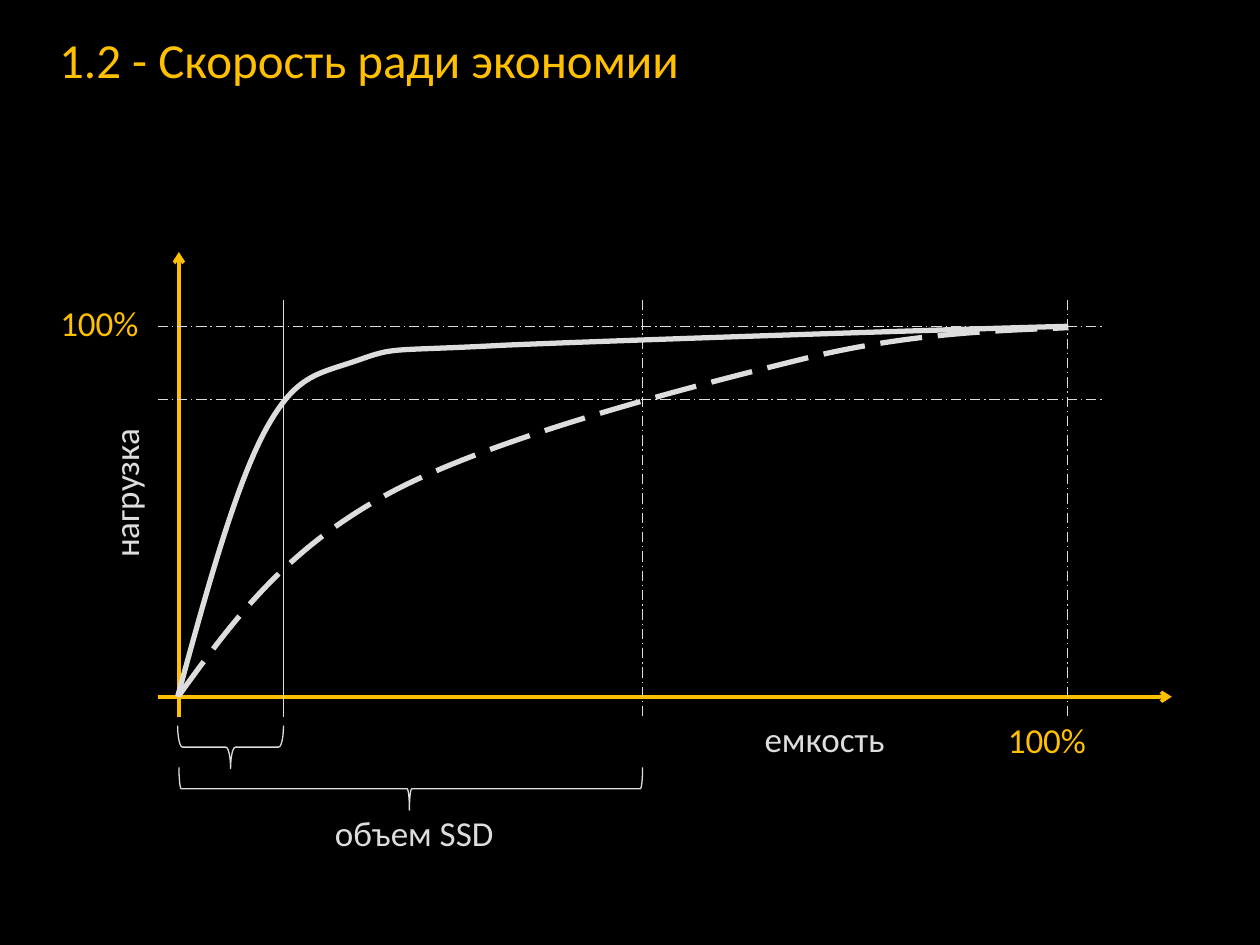
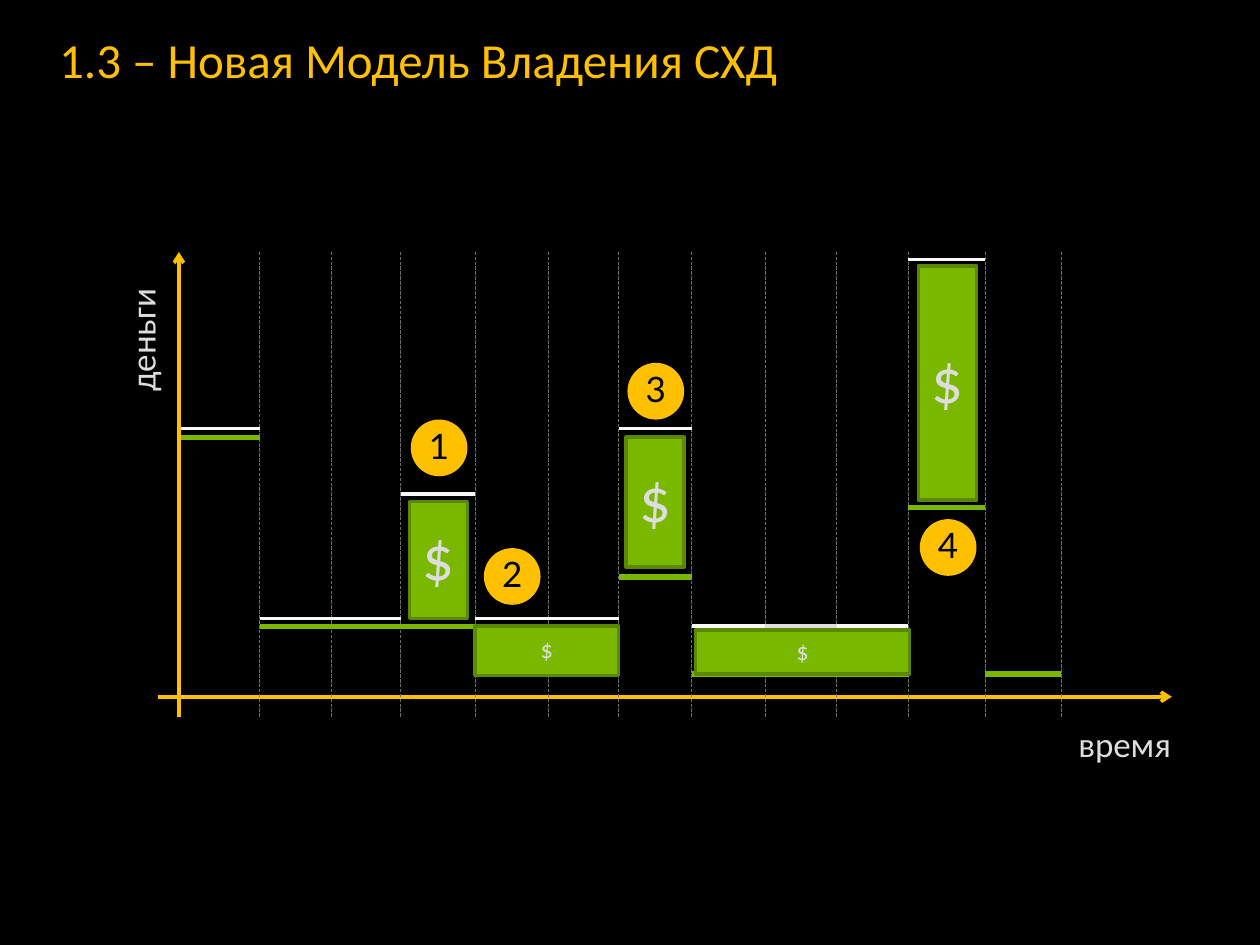
from lxml import etree
from pptx import Presentation
from pptx.dml.color import RGBColor
from pptx.enum.dml import MSO_LINE
from pptx.enum.shapes import MSO_CONNECTOR, MSO_SHAPE
from pptx.enum.text import MSO_ANCHOR, MSO_AUTO_SIZE, PP_ALIGN
from pptx.oxml.ns import qn
from pptx.util import Inches, Pt

STRAIGHT = MSO_CONNECTOR.STRAIGHT
RECTANGLE, OVAL, BRACE = MSO_SHAPE.RECTANGLE, MSO_SHAPE.OVAL, MSO_SHAPE.RIGHT_BRACE
LONG_DASH, DASH_DOT = MSO_LINE.LONG_DASH, MSO_LINE.LONG_DASH_DOT
TOP, MIDDLE = MSO_ANCHOR.TOP, MSO_ANCHOR.MIDDLE
LEFT, CENTER = PP_ALIGN.LEFT, PP_ALIGN.CENTER
NO_FIT = MSO_AUTO_SIZE.NONE
TITLE_ONLY = 5

BLACK, GOLD, SILVER, WHITE = "000000", "FFC000", "DDDDDD", "F8F8F8"
GREEN, DARK_GREEN, GRAY = "7AB800", "5A8800", "6E6E6E"
FONT, BADGE_FONT = "Calibri", "Lato"

AXIS_X, AXIS_Y = 1.42, 5.53
AXIS_START, AXIS_END = 1.25, 9.3
AXIS_TOP, AXIS_BOTTOM = 2, 5.69


def color(value):
    """Turn a hex string into a colour."""
    return RGBColor.from_string(value)


class Painter:
    """Hold the deck style and draw on the current page."""

    def __init__(self):
        """Open a black 4:3 deck."""
        self.deck = Presentation()
        self.deck.slide_width, self.deck.slide_height = Inches(10), Inches(7.5)
        fill = self.deck.slide_master.background.fill
        fill.solid()
        fill.fore_color.rgb = color(BLACK)
        self.page = None

    def add_page(self, title):
        """Start a page with its title and both axes."""
        self.page = self.deck.slides.add_slide(self.deck.slide_layouts[TITLE_ONLY])
        box = self.page.shapes.title
        box.left, box.top, box.width, box.height = map(Inches, (0.47, 0.29, 9.53, 0.82))
        self.set_text(box, title, 28, GOLD, inset=0)
        self.line((AXIS_START, AXIS_Y), (AXIS_END, AXIS_Y), GOLD, 2, arrow=True)
        self.line((AXIS_X, AXIS_BOTTOM), (AXIS_X, AXIS_TOP), GOLD, 2, arrow=True)

    def set_text(self, box, text, size, ink, font=FONT, align=LEFT, anchor=TOP,
                 inset=None, spacing=0, wrap=True):
        """Put one formatted paragraph in a shape."""
        frame = box.text_frame
        frame.text = text
        frame.auto_size, frame.word_wrap = NO_FIT, wrap
        frame.vertical_anchor = anchor
        if inset is not None:
            frame.margin_left = frame.margin_right = Inches(inset)
            frame.margin_top = frame.margin_bottom = Inches(inset)
        para = frame.paragraphs[0]
        para.alignment, para.line_spacing = align, 0.9
        para.space_before = para.space_after = Pt(spacing)
        para.font.name, para.font.size = font, Pt(size)
        para.font.color.rgb = color(ink)

    def stroke(self, shape, ink, width, dash=None):
        """Style the outline of a shape."""
        shape.line.color.rgb = color(ink)
        shape.line.width = Pt(width)
        if dash is not None:
            shape.line.dash_style = dash

    def line(self, start, end, ink, width, dash=None, arrow=False):
        """Draw a straight line between two points."""
        line = self.page.shapes.add_connector(STRAIGHT, *map(Inches, (*start, *end)))
        self.stroke(line, ink, width, dash)
        properties = line._element.spPr
        if arrow:
            outline = properties.find(qn("a:ln"))
            etree.SubElement(outline, qn("a:tailEnd"), type="arrow")
        etree.SubElement(properties, qn("a:effectLst"))

    def curve(self, points, dash=None):
        """Draw a chain of Bezier arcs: a start, then three points per arc."""
        points = [tuple(map(Inches, point)) for point in points]
        builder = self.page.shapes.build_freeform(*points[0])
        builder.add_line_segments(points[1:], close=False)
        shape = builder.convert_to_shape()
        shape.shadow.inherit = False
        shape.fill.background()
        self.stroke(shape, SILVER, 3, dash)
        segments = list(shape._element.iter(qn("a:lnTo")))
        for first in range(0, len(segments), 3):
            arc = etree.Element(qn("a:cubicBezTo"))
            segments[first].addprevious(arc)
            for segment in segments[first:first + 3]:
                arc.append(segment[0])
                segment.getparent().remove(segment)

    def label(self, text, left, top, width, ink=SILVER, rotation=0):
        """Add a short unwrapped caption."""
        box = self.page.shapes.add_textbox(*map(Inches, (left, top, width, 0.4)))
        box.rotation = rotation
        self.set_text(box, text, 20, ink, spacing=1, wrap=False)

    def shape(self, kind, place, fill=None):
        """Add a preset shape without shadow or outline."""
        shape = self.page.shapes.add_shape(kind, *map(Inches, place))
        shape.shadow.inherit = False
        shape.line.fill.background()
        if fill:
            shape.fill.solid()
            shape.fill.fore_color.rgb = color(fill)
        else:
            shape.fill.background()
        return shape

    def brace(self, place, curl, tip):
        """Add a brace that opens upwards."""
        brace = self.shape(BRACE, place)
        brace.rotation = 90
        brace.adjustments[0], brace.adjustments[1] = curl, tip
        self.stroke(brace, SILVER, 0.75)

    def money(self, place, size):
        """Add a green block with a dollar sign."""
        block = self.shape(RECTANGLE, place, GREEN)
        self.stroke(block, DARK_GREEN, 2)
        self.set_text(block, "$", size, SILVER, align=CENTER, anchor=MIDDLE,
                      inset=0, spacing=1)

    def badge(self, number, left, top):
        """Add a numbered gold circle."""
        circle = self.shape(OVAL, (left, top, 0.45, 0.45), GOLD)
        self.set_text(circle, str(number), 20, BLACK, BADGE_FONT, CENTER, MIDDLE,
                      inset=0, spacing=1)


def draw_load_curves(painter):
    """Draw load against capacity."""
    painter.add_page("1.2 - Скорость ради экономии")
    painter.curve([(1.41, 5.53), (1.64, 4.69), (1.87, 3.85), (2.11, 3.41),
                   (2.35, 2.97), (2.52, 2.97), (2.84, 2.86),
                   (3.15, 2.75), (3.06, 2.79), (4, 2.74),
                   (4.94, 2.7), (7.68, 2.61), (8.47, 2.59)])
    painter.curve([(1.42, 5.52), (1.84, 4.94), (2.25, 4.37), (3.08, 3.92),
                   (3.91, 3.47), (5.51, 3.06), (6.41, 2.84),
                   (7.31, 2.62), (8.14, 2.62), (8.48, 2.6)], LONG_DASH)
    for load in (2.59, 3.17):
        painter.line((AXIS_START, load), (8.77, load), SILVER, 0.75, DASH_DOT)
    for capacity, dash in ((2.25, None), (5.1, DASH_DOT), (8.47, DASH_DOT)):
        painter.line((capacity, 2.38), (capacity, AXIS_BOTTOM), SILVER, 0.75, dash)
    painter.brace((1.66, 5.51, 0.34, 0.84), 0.113, 0.5)
    painter.brace((3.09, 4.42, 0.34, 3.68), 0.054, 0.503)
    painter.label("100%", 0.38, 2.38, 0.88, GOLD)
    painter.label("100%", 7.9, 5.69, 0.88, GOLD)
    painter.label("емкость", 5.97, 5.68, 1.28)
    painter.label("нагрузка", 0.33, 3.64, 1.37, rotation=270)
    painter.label("объем SSD", 2.56, 6.43, 1.61)


def draw_ownership_costs(painter):
    """Draw spending over time for two ownership models."""
    painter.add_page("1.3 – Новая Модель Владения СХД")
    periods = [1.44, 2.06, 2.63, 3.18, 3.77, 4.35, 4.91, 5.49, 6.07, 6.64,
               7.21, 7.82, 8.42]
    for period in periods[1:]:
        painter.line((period, AXIS_BOTTOM), (period, AXIS_TOP), GRAY, 0.25, LONG_DASH)
    old_costs = [(0, 1, 3.4, WHITE), (1, 3, 4.91, WHITE), (3, 4, 3.92, WHITE),
                 (4, 6, 4.91, WHITE), (6, 7, 3.4, WHITE), (7, 8, 4.97, WHITE),
                 (8, 9, 4.97, SILVER), (9, 10, 4.97, WHITE), (10, 11, 2.06, WHITE)]
    new_costs = [(0, 1, 3.47), (1, 3, 4.97), (3, 4, 4.97), (4, 6, 5.35), (6, 7, 4.58),
                 (7, 8, 5.35), (8, 9, 5.35), (9, 10, 5.35), (10, 11, 4.03),
                 (11, 12, 5.35)]
    for first, last, cost, ink in old_costs:
        painter.line((periods[first], cost), (periods[last], cost), ink, 2)
    for first, last, cost in new_costs:
        painter.line((periods[first], cost), (periods[last], cost), GREEN, 3)
    for left, top, height in ((3.25, 3.98, 0.93), (4.97, 3.47, 1.03), (7.29, 2.11, 1.86)):
        painter.money((left, top, 0.46, height), 36)
    painter.money((5.52, 5, 1.7, 0.35), 14)
    painter.money((3.77, 4.97, 1.14, 0.39), 14)
    painter.label("время", 8.46, 5.72, 1)
    painter.label("деньги", 0.6, 2.46, 1.09, rotation=270)
    badges = [(3.26, 3.33), (3.84, 4.35), (4.98, 2.88), (7.3, 4.12)]
    for number, corner in enumerate(badges, 1):
        painter.badge(number, *corner)


def main():
    """Build and save the deck."""
    painter = Painter()
    draw_load_curves(painter)
    draw_ownership_costs(painter)
    painter.deck.save("out.pptx")


if __name__ == "__main__":
    main()
